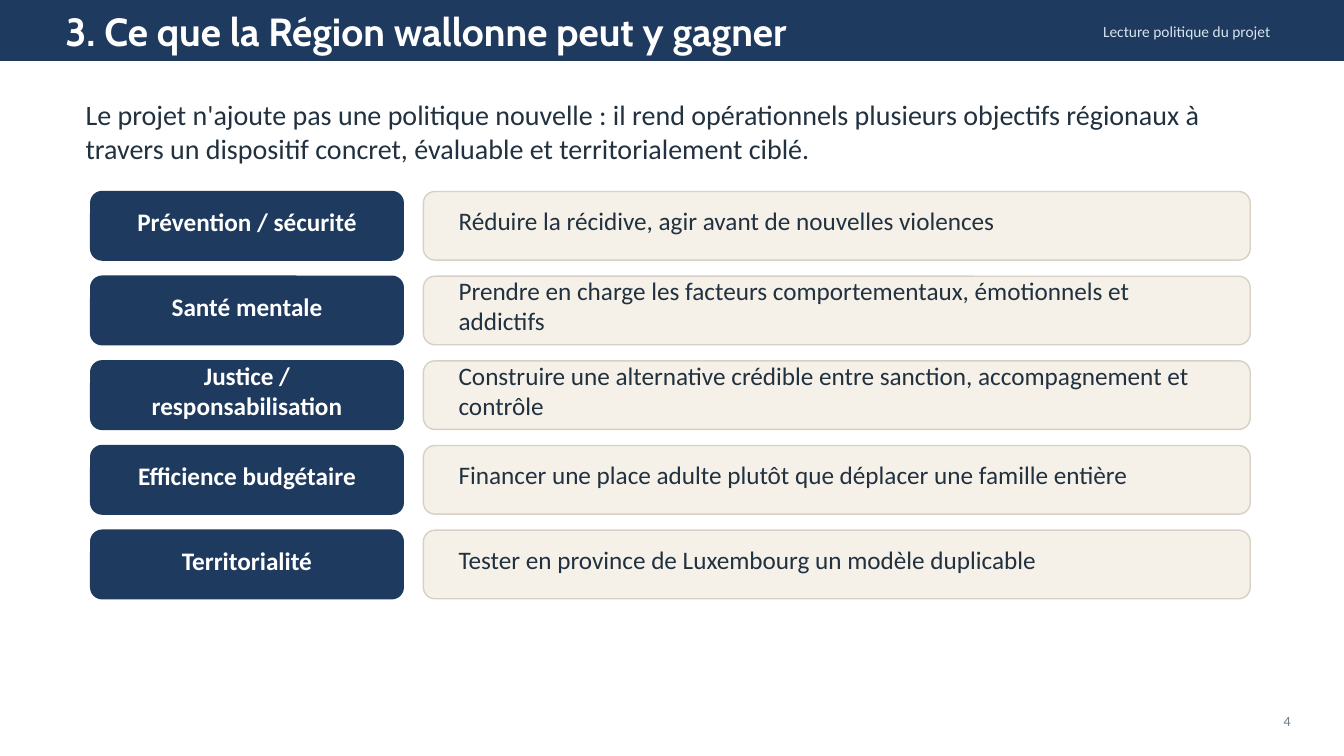
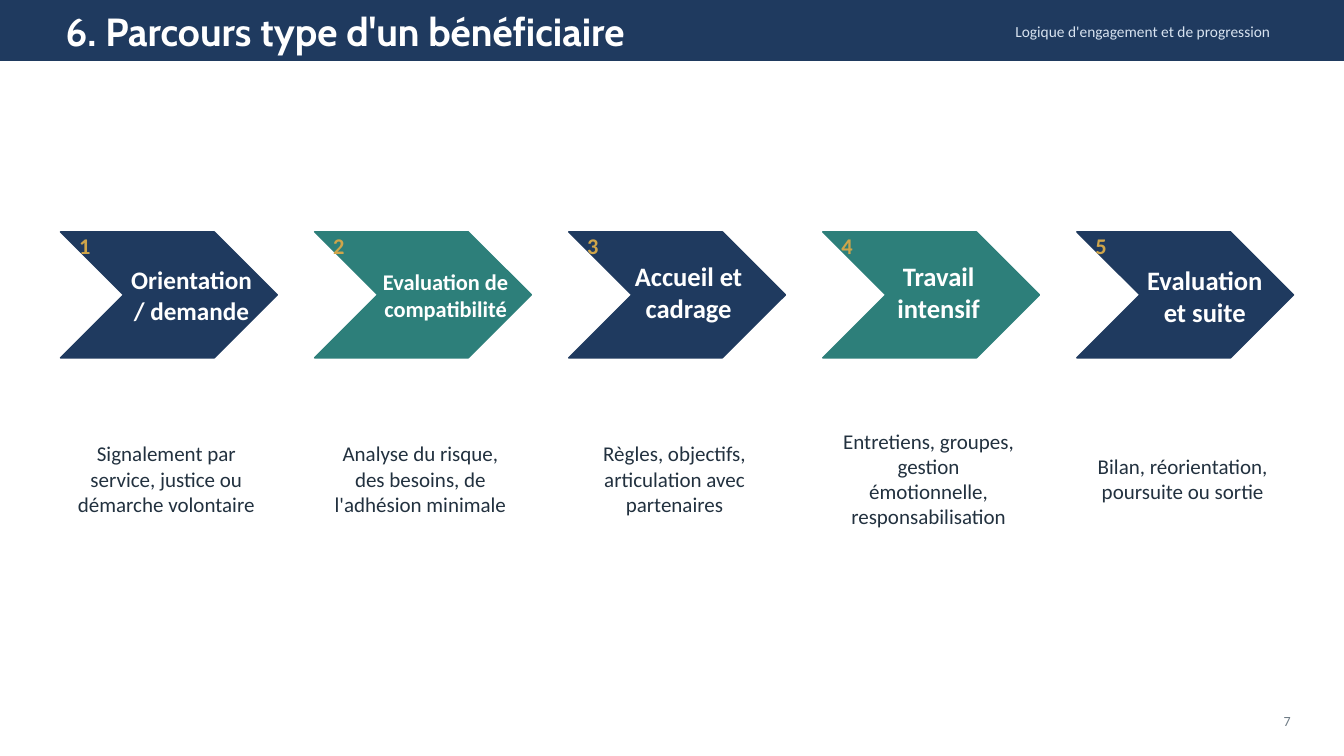
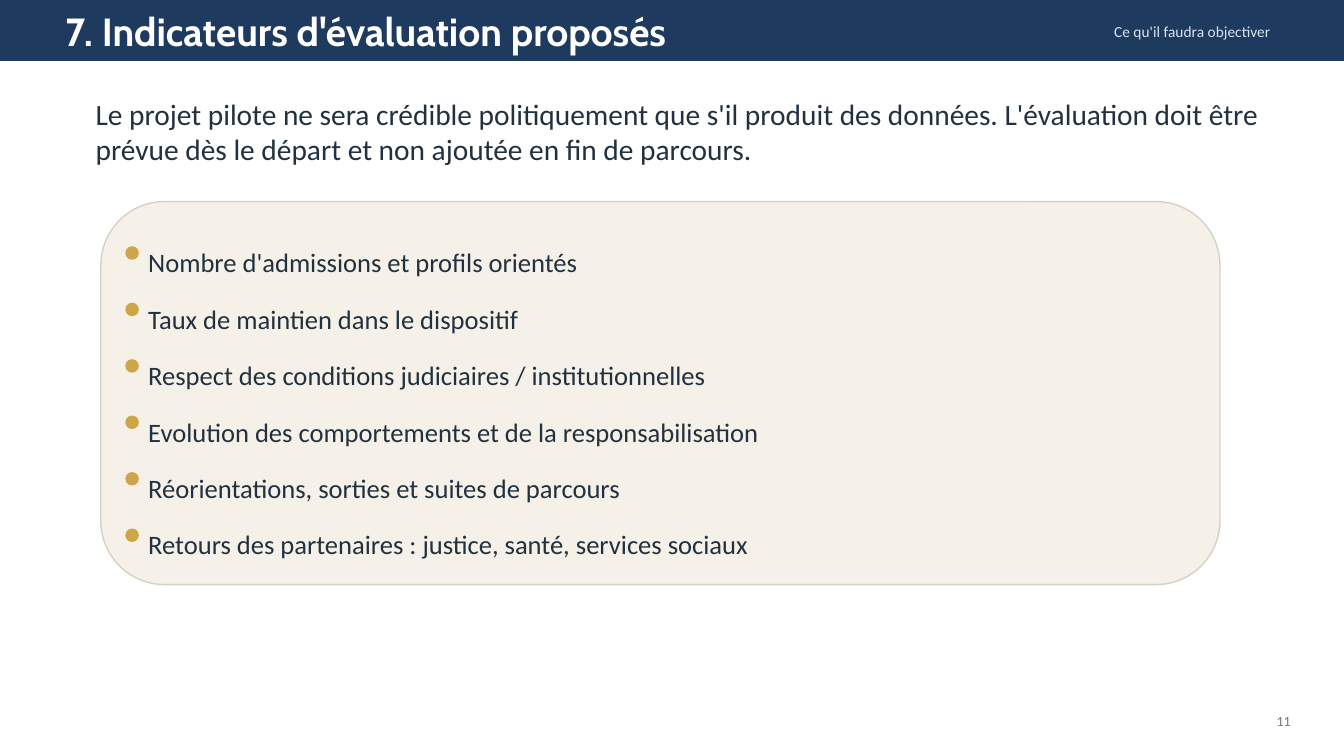
"""Build three slides on regional gains, the beneficiary path and evaluation indicators."""
from dataclasses import dataclass

from pptx import Presentation
from pptx.dml.color import RGBColor
from pptx.enum import shapes, text
from pptx.util import Inches, Pt

LEFT, CENTER, RIGHT = text.PP_ALIGN.LEFT, text.PP_ALIGN.CENTER, text.PP_ALIGN.RIGHT
KIND = shapes.MSO_SHAPE


@dataclass(frozen=True)
class Theme:
    """Hold the colours, fonts and type sizes of the deck."""
    navy: str = "1F3A5F"
    teal: str = "2D7F7A"
    gold: str = "CFA54A"
    cream: str = "F5F1E8"
    sand: str = "D7D1C5"
    ink: str = "22313F"
    white: str = "FFFFFF"
    pale: str = "D8E3F0"
    grey: str = "6E7B85"
    title_font: str = "Cabin"
    body_font: str = "Calibri"
    title: int = 28
    intro: int = 20
    large_intro: int = 21
    indicator: int = 19
    row: int = 18
    number: int = 16
    detail: int = 15
    subject: int = 11
    folio: int = 10


THEME = Theme()


def add_panel(page, kind, area, fill, outline=None):
    """Add a filled preset shape with a one-point outline."""
    panel = page.shapes.add_shape(kind, *map(Inches, area))
    panel.shadow.inherit = False
    panel.fill.solid()
    panel.fill.fore_color.rgb = RGBColor.from_string(fill)
    panel.line.color.rgb = RGBColor.from_string(outline or fill)
    panel.line.width = Pt(1)


def add_label(page, area, wording, size, color=THEME.ink, align=LEFT,
              bold=False, font=THEME.body_font, margin=None):
    """Add a wrapped, vertically centred line of text."""
    box = page.shapes.add_textbox(*map(Inches, area))
    frame = box.text_frame
    frame.word_wrap = True
    frame.vertical_anchor = text.MSO_ANCHOR.MIDDLE
    if margin is not None:
        frame.margin_left = frame.margin_right = Inches(margin)
        frame.margin_top = frame.margin_bottom = Inches(margin)
    para = frame.paragraphs[0]
    para.alignment = align
    span = para.add_run()
    span.text = wording
    span.font.name = font
    span.font.size = Pt(size)
    span.font.bold = bold
    span.font.color.rgb = RGBColor.from_string(color)


def add_page(deck, title, subject, folio):
    """Add a blank page with its title band and page number."""
    page = deck.slides.add_slide(deck.slide_layouts[6])
    add_panel(page, KIND.RECTANGLE, (0, 0, 13.33, 0.6), THEME.navy)
    add_label(page, (0.55, 0.18, 8.5, 0.26), title, THEME.title, THEME.white,
              bold=True, font=THEME.title_font)
    add_label(page, (9.2, 0.2, 3.5, 0.22), subject, THEME.subject, THEME.pale, RIGHT)
    add_label(page, (12.4, 7.05, 0.5, 0.2), folio, THEME.folio, THEME.grey, RIGHT)
    return page


def add_goal(page, top, goal, benefit):
    """Add a goal and its benefit side by side."""
    add_panel(page, KIND.ROUNDED_RECTANGLE, (0.9, top, 3.1, 0.68), THEME.navy)
    add_label(page, (1.1, top + 0.17, 2.7, 0.25), goal, THEME.row, THEME.white,
              CENTER, bold=True)
    add_panel(page, KIND.ROUNDED_RECTANGLE, (4.2, top, 8.2, 0.68), THEME.cream, THEME.sand)
    add_label(page, (4.45, top + 0.14, 7.7, 0.3), benefit, THEME.row)


def add_step(page, left, number, fill, step, size, place, detail):
    """Add a numbered chevron with its name and the detail below."""
    shift, top, height = place
    add_panel(page, KIND.CHEVRON, (left, 2.3, 2.15, 1.25), fill)
    add_label(page, (left + 0.08, 2.35, 0.32, 0.18), str(number), THEME.number,
              THEME.gold, CENTER, bold=True)
    add_label(page, (left + shift, top, 1.5, height), step, size, THEME.white,
              CENTER, bold=True)
    add_label(page, (left + 0.05, 4, 2, 1.5), detail, THEME.detail, align=CENTER)


def add_indicator(page, top, indicator):
    """Add a gold dot and its indicator."""
    add_panel(page, KIND.OVAL, (1.25, top + 0.1, 0.12, 0.12), THEME.gold)
    add_label(page, (1.47, top, 10.18, 0.5), indicator, THEME.indicator, margin=0)


def build_gains(deck):
    """Build the page on what the region can gain."""
    page = add_page(deck, "3. Ce que la Région wallonne peut y gagner",
                    "Lecture politique du projet", "4")
    add_label(page, (0.75, 0.95, 12, 0.7),
              "Le projet n'ajoute pas une politique nouvelle : il rend opérationnels "
              "plusieurs objectifs régionaux à travers un dispositif concret, évaluable "
              "et territorialement ciblé.", THEME.intro)
    goals = [
        ("Prévention / sécurité", "Réduire la récidive, agir avant de nouvelles violences"),
        ("Santé mentale", "Prendre en charge les facteurs comportementaux, "
                          "émotionnels et addictifs"),
        ("Justice / responsabilisation", "Construire une alternative crédible entre "
                                         "sanction, accompagnement et contrôle"),
        ("Efficience budgétaire", "Financer une place adulte plutôt que déplacer "
                                  "une famille entière"),
        ("Territorialité", "Tester en province de Luxembourg un modèle duplicable"),
    ]
    for index, (goal, benefit) in enumerate(goals):
        add_goal(page, 1.9 + 0.84 * index, goal, benefit)


def build_path(deck):
    """Build the page on the path of a beneficiary."""
    page = add_page(deck, "6. Parcours type d'un bénéficiaire",
                    "Logique d'engagement et de progression", "7")
    steps = [
        ("Orientation / demande", 18, (0.55, 2.85, 0.15),
         "Signalement par service, justice ou démarche volontaire"),
        ("Evaluation de compatibilité", 16, (0.55, 2.75, 0.35),
         "Analyse du risque, des besoins, de l'adhésion minimale"),
        ("Accueil et cadrage", 19, (0.44, 2.72, 0.35),
         "Règles, objectifs, articulation avec partenaires"),
        ("Travail intensif", 19, (0.4, 2.72, 0.35),
         "Entretiens, groupes, gestion émotionnelle, responsabilisation"),
        ("Evaluation et suite", 19, (0.52, 2.76, 0.35),
         "Bilan, réorientation, poursuite ou sortie"),
    ]
    for index, (step, size, place, detail) in enumerate(steps):
        fill = THEME.teal if index % 2 else THEME.navy
        add_step(page, 0.6 + 2.52 * index, index + 1, fill, step, size, place, detail)


def build_indicators(deck):
    """Build the page on the proposed indicators."""
    page = add_page(deck, "7. Indicateurs d'évaluation proposés",
                    "Ce qu'il faudra objectiver", "11")
    add_label(page, (0.85, 1, 12, 0.6),
              "Le projet pilote ne sera crédible politiquement que s'il produit des "
              "données. L'évaluation doit être prévue dès le départ et non ajoutée en "
              "fin de parcours.", THEME.large_intro)
    add_panel(page, KIND.ROUNDED_RECTANGLE, (1, 2, 11.1, 3.8), THEME.cream, THEME.sand)
    indicators = [
        "Nombre d'admissions et profils orientés",
        "Taux de maintien dans le dispositif",
        "Respect des conditions judiciaires / institutionnelles",
        "Evolution des comportements et de la responsabilisation",
        "Réorientations, sorties et suites de parcours",
        "Retours des partenaires : justice, santé, services sociaux",
    ]
    for index, indicator in enumerate(indicators):
        add_indicator(page, 2.35 + 0.56 * index, indicator)


def main():
    """Build the deck and save it."""
    deck = Presentation()
    deck.slide_width, deck.slide_height = Inches(13.33), Inches(7.5)
    build_gains(deck)
    build_path(deck)
    build_indicators(deck)
    deck.save("out.pptx")


if __name__ == "__main__":
    main()
